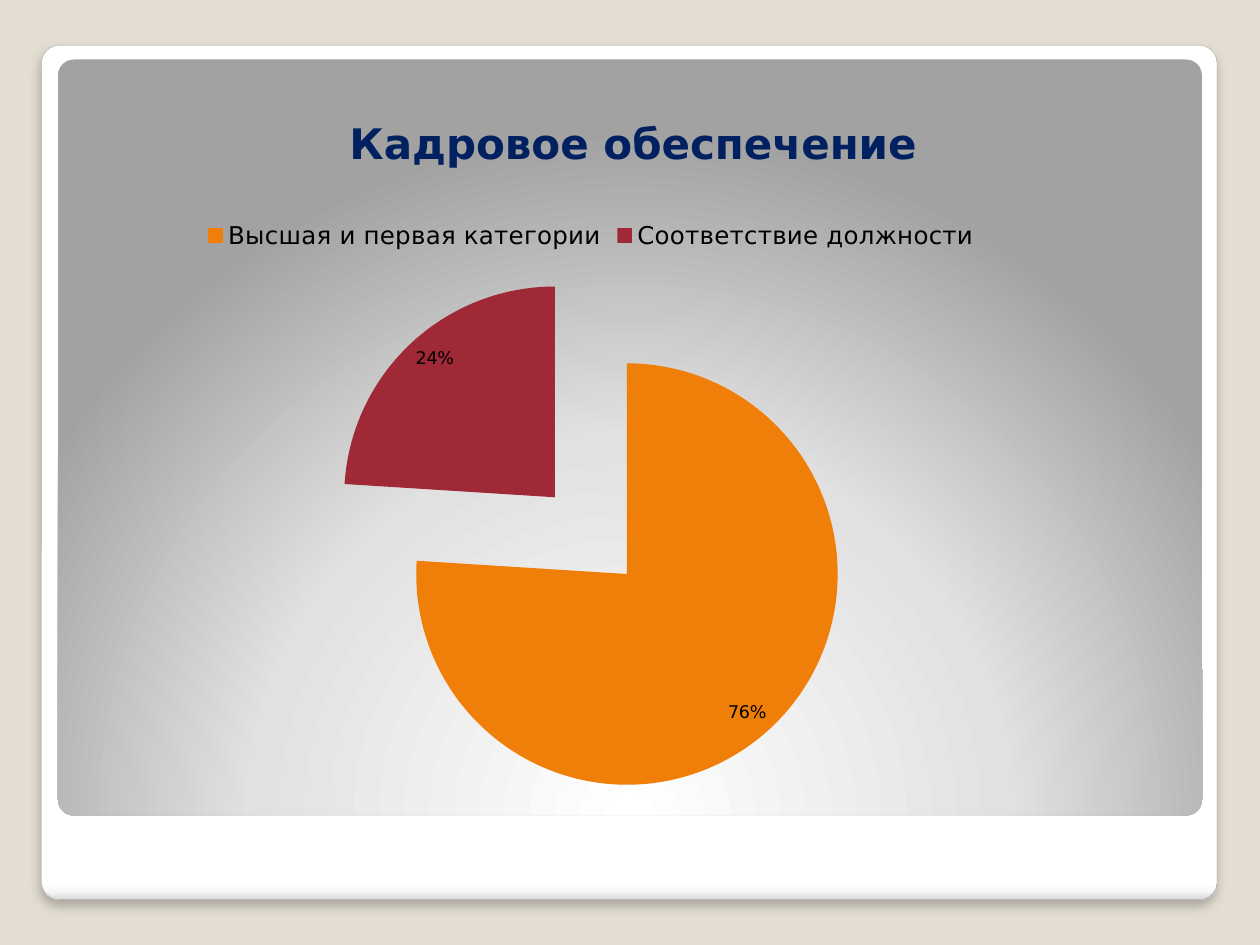
from dataclasses import dataclass
from typing import Optional

import lxml.etree
import pptx
import pptx.chart.data
import pptx.dml.color
import pptx.enum.chart
import pptx.enum.shapes
import pptx.enum.text
import pptx.oxml
import pptx.oxml.ns
import pptx.util

WIDTH = pptx.util.Inches(10)
HEIGHT = pptx.util.Inches(7.5)


@dataclass(frozen=True)
class Theme:
    font: str = "DejaVu Sans"
    background: str = "E3DED1"
    title: str = "002060"
    text: str = "000000"
    outline: str = "A4A4A4"
    slices: tuple[str, ...] = ("F07F09", "9F2936")
    title_size: int = 24
    legend_size: int = 14
    label_size: int = 10


@dataclass(frozen=True)
class Area:
    left: float
    top: float
    width: float
    height: float

    def lengths(self) -> tuple[int, int, int, int]:
        return (round(self.left * WIDTH), round(self.top * HEIGHT),
                round(self.width * WIDTH), round(self.height * HEIGHT))


@dataclass(frozen=True)
class Panel:
    area: Area
    stops: tuple[tuple[int, str], ...]
    direction: str
    outline: Optional[str] = None
    shadow: bool = False


THEME = Theme()
LINEAR = '<a:lin ang="5400000" scaled="0"/>'
RADIAL = ('<a:path path="circle">'
          '<a:fillToRect l="50000" t="175000" r="50000" b="-75000"/></a:path>')
SHADOW = ('<a:outerShdw blurRad="76200" dist="50800" dir="5400000" rotWithShape="0">'
          '<a:srgbClr val="000000"><a:alpha val="25000"/></a:srgbClr></a:outerShdw>')
PANELS = (
    Panel(Area(0.033, 0.048, 0.933, 0.904),
          ((0, "FFFFFF"), (98, "FFFFFF"), (99, "F7F7F7"), (100, "DADADA")),
          LINEAR, THEME.outline, True),
    Panel(Area(0.046, 0.063, 0.908, 0.8),
          ((0, "FFFFFF"), (55, "E1E1E1"), (100, "A2A2A2")), RADIAL),
)
TITLE_AREA = Area(0.055, 0.031, 0.895, 0.153)
CHART_AREA = Area(0.102, 0.219, 0.734, 0.645)
STAFF = {"Высшая и первая категории": 76, "Соответствие должности": 24}


def color(value: str) -> pptx.dml.color.RGBColor:
    return pptx.dml.color.RGBColor.from_string(value)


def element(tag: str, content: str) -> lxml.etree._Element:
    namespace = pptx.oxml.ns.nsdecls("a")
    return pptx.oxml.parse_xml(f"<a:{tag} {namespace}>{content}</a:{tag}>")


def style_font(font, size: int, value: str, bold: bool = False) -> None:
    font.name = THEME.font
    font.size = pptx.util.Pt(size)
    font.bold = bold
    font.color.rgb = color(value)


def draw_panel(page, panel: Panel) -> None:
    shape = page.shapes.add_shape(
        pptx.enum.shapes.MSO_SHAPE.ROUNDED_RECTANGLE, *panel.area.lengths())
    shape.adjustments[0] = 0.021
    shape.shadow.inherit = False
    shape.fill.gradient()
    properties = shape._element.spPr
    gradient = properties.find(pptx.oxml.ns.qn("a:gradFill"))
    stops = "".join(f'<a:gs pos="{share * 1000}"><a:srgbClr val="{value}"/></a:gs>'
                    for share, value in panel.stops)
    properties.replace(gradient, element(
        "gradFill", f"<a:gsLst>{stops}</a:gsLst>{panel.direction}"))
    if panel.outline:
        shape.line.color.rgb = color(panel.outline)
        shape.line.width = pptx.util.Pt(0.16)
    else:
        shape.line.fill.background()
    if panel.shadow:
        effects = properties.find(pptx.oxml.ns.qn("a:effectLst"))
        properties.replace(effects, element("effectLst", SHADOW))


def draw_title(page, area: Area, text: str) -> None:
    box = page.shapes.add_textbox(*area.lengths())
    frame = box.text_frame
    frame.word_wrap = True
    frame.vertical_anchor = pptx.enum.text.MSO_ANCHOR.BOTTOM
    frame.text = text
    para = frame.paragraphs[0]
    para.alignment = pptx.enum.text.PP_ALIGN.CENTER
    style_font(para.runs[0].font, THEME.title_size, THEME.title, True)


def draw_pie(page, area: Area, shares: dict[str, int]) -> None:
    data = pptx.chart.data.CategoryChartData()
    data.categories = list(shares)
    data.add_series("Series 1", list(shares.values()))
    chart = page.shapes.add_chart(
        pptx.enum.chart.XL_CHART_TYPE.PIE_EXPLODED, *area.lengths(), data).chart
    chart.has_title = False
    style_font(chart.font, THEME.label_size, THEME.text)
    chart.has_legend = True
    chart.legend.position = pptx.enum.chart.XL_LEGEND_POSITION.TOP
    chart.legend.include_in_layout = False
    style_font(chart.legend.font, THEME.legend_size, THEME.text)
    plot = chart.plots[0]
    plot.vary_by_categories = True
    series = plot.series[0]
    for index, value in enumerate(THEME.slices):
        fill = series.points[index].format.fill
        fill.solid()
        fill.fore_color.rgb = color(value)
    labels = series.data_labels
    labels.show_percentage = True
    labels.show_value = False
    labels.number_format = "0%"
    labels.number_format_is_linked = False
    labels.position = pptx.enum.chart.XL_LABEL_POSITION.INSIDE_END
    style_font(labels.font, THEME.label_size, THEME.text)


def main() -> None:
    deck = pptx.Presentation()
    deck.slide_width, deck.slide_height = WIDTH, HEIGHT
    page = deck.slides.add_slide(deck.slide_layouts[6])
    page.background.fill.solid()
    page.background.fill.fore_color.rgb = color(THEME.background)
    for panel in PANELS:
        draw_panel(page, panel)
    draw_title(page, TITLE_AREA, "Кадровое обеспечение")
    draw_pie(page, CHART_AREA, STAFF)
    deck.save("out.pptx")


if __name__ == "__main__":
    main()
